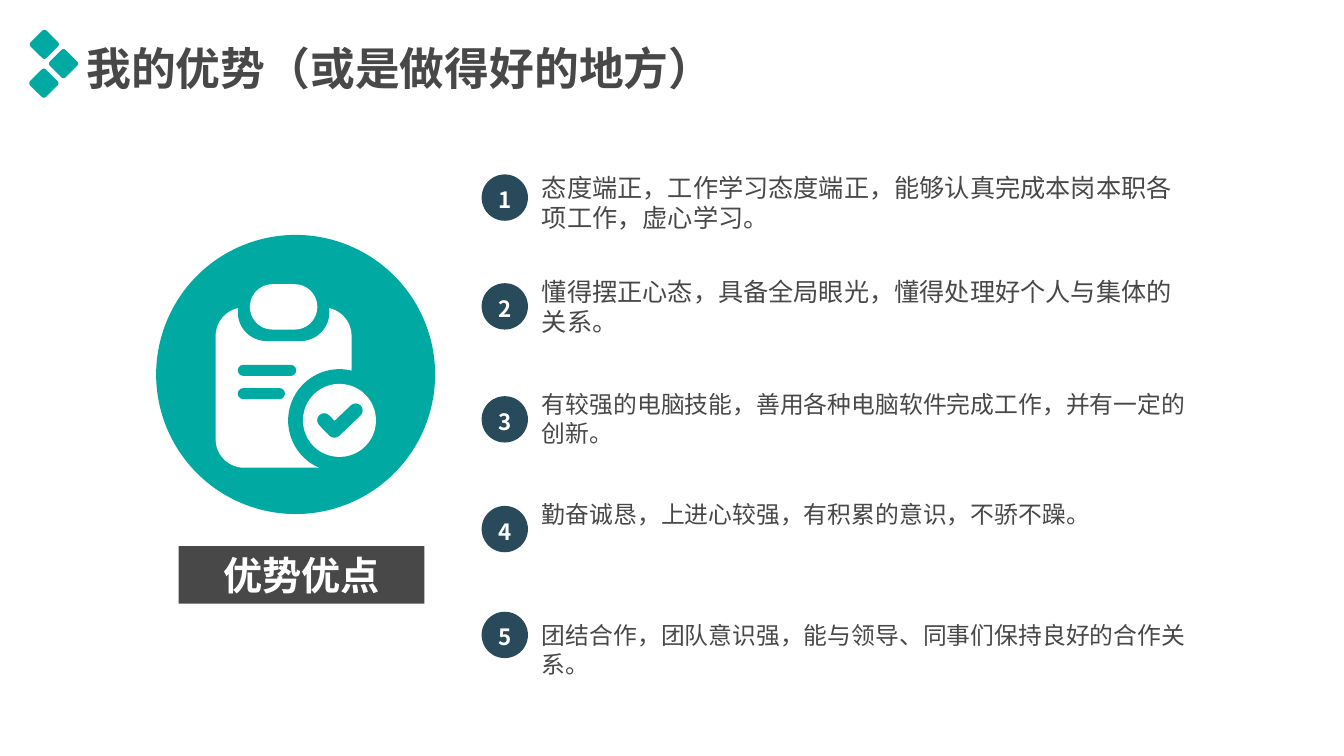
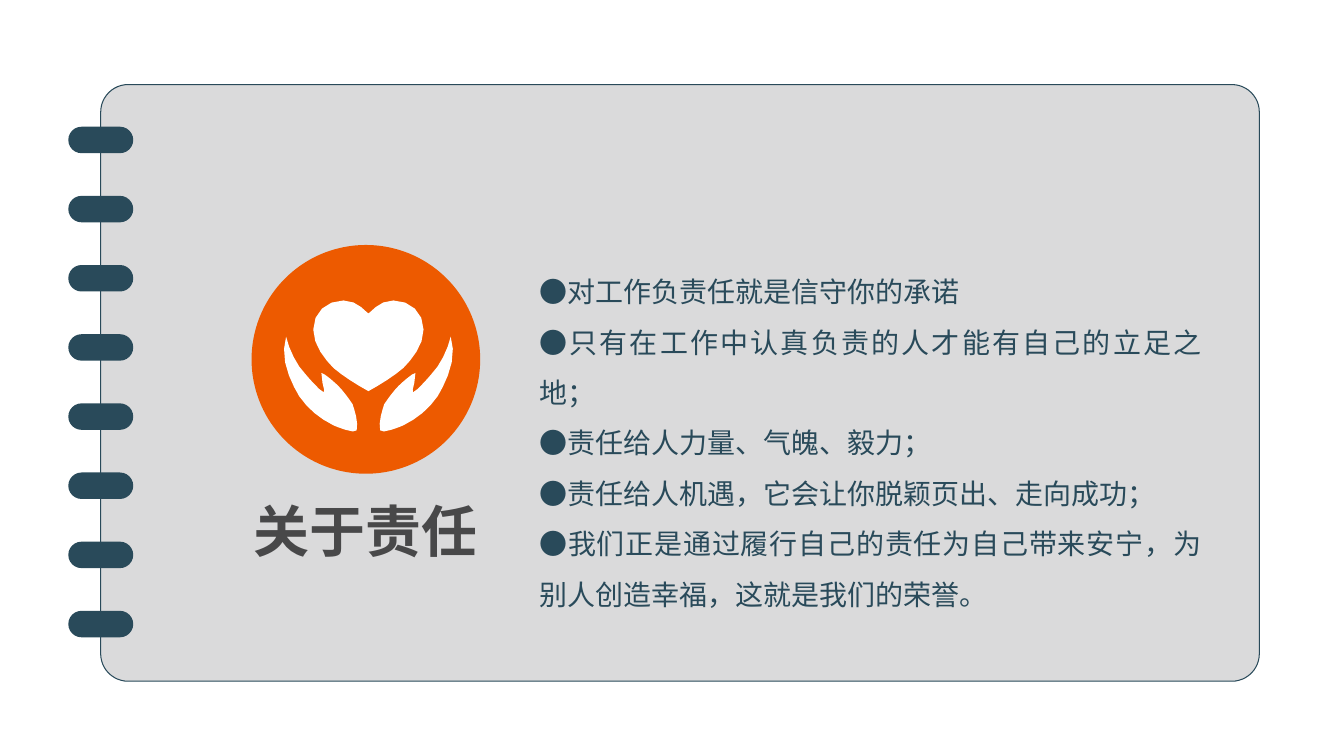
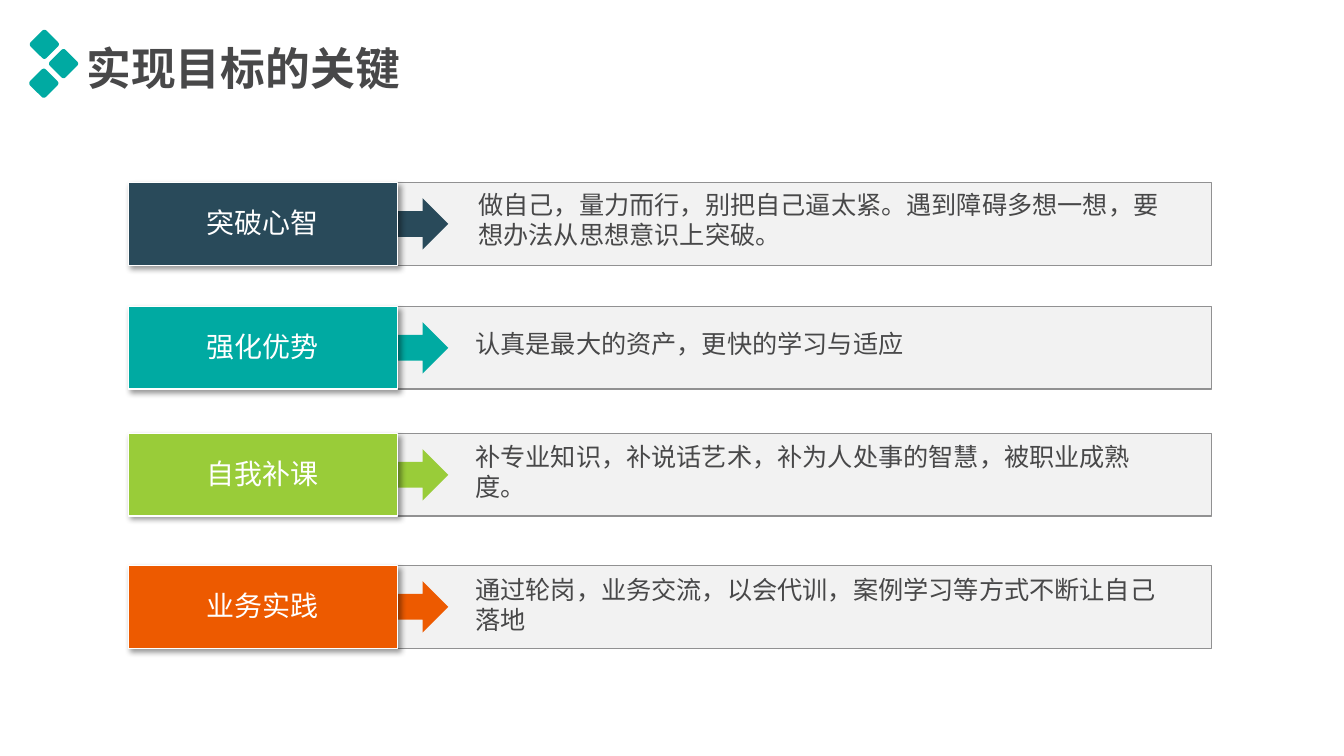
from lxml import etree
from pptx import Presentation
from pptx.dml.color import RGBColor
from pptx.enum.shapes import MSO_SHAPE
from pptx.enum.text import MSO_ANCHOR, PP_ALIGN
from pptx.oxml.ns import qn
from pptx.util import Pt

RECTANGLE, ROUNDED = MSO_SHAPE.RECTANGLE, MSO_SHAPE.ROUNDED_RECTANGLE
ELLIPSE, ARROW = MSO_SHAPE.OVAL, MSO_SHAPE.RIGHT_ARROW
TOP, MIDDLE = MSO_ANCHOR.TOP, MSO_ANCHOR.MIDDLE
LEFT, CENTER, JUSTIFY = PP_ALIGN.LEFT, PP_ALIGN.CENTER, PP_ALIGN.JUSTIFY

FONT = "Noto Sans CJK SC"
TEAL = RGBColor(0x00, 0xAA, 0xA2)
NAVY = RGBColor(0x29, 0x4A, 0x5A)
GREEN = RGBColor(0x99, 0xCC, 0x39)
ORANGE = RGBColor(0xED, 0x5A, 0x00)
CHARCOAL = RGBColor(0x48, 0x48, 0x49)
PAGE_GRAY = RGBColor(0xDA, 0xDA, 0xDB)
BAND_GRAY = RGBColor(0xF2, 0xF2, 0xF2)
BORDER_GRAY = RGBColor(0x91, 0x91, 0x92)
WHITE = RGBColor(0xFF, 0xFF, 0xFF)


def add_shape(slide, kind, left, top, width, height, fill, line=None, corner=None):
    shape = slide.shapes.add_shape(kind, Pt(left), Pt(top), Pt(width), Pt(height))
    shape.shadow.inherit = False
    shape.fill.solid()
    shape.fill.fore_color.rgb = fill
    if line is None:
        shape.line.fill.background()
    else:
        shape.line.color.rgb = line
        shape.line.width = Pt(0.75)
    if corner is not None:
        shape.adjustments[0] = corner
    return shape


def add_text(shape, text, size, color=CHARCOAL, bold=False, align=LEFT,
             spacing=1.2, margin=7.2, bottom=3.6, anchor=TOP):
    """Fill a shape with one paragraph per line; spacing is in multiples of size."""
    frame = shape.text_frame
    frame.word_wrap = True
    frame.vertical_anchor = anchor
    frame.margin_left = frame.margin_right = Pt(margin)
    frame.margin_top = Pt(3.6)
    frame.margin_bottom = Pt(bottom)
    for index, line in enumerate(text.split("\n")):
        paragraph = frame.add_paragraph() if index else frame.paragraphs[0]
        paragraph.alignment = align
        paragraph.line_spacing = Pt(spacing * size)
        paragraph._p.get_or_add_pPr().set("hangingPunct", "0")
        run = paragraph.add_run()
        run.text = line
        run.font.name = FONT
        run.font.size = Pt(size)
        run.font.bold = bold
        run.font.color.rgb = color
        etree.SubElement(run._r.get_or_add_rPr(), qn("a:ea"), typeface=FONT)


presentation = Presentation()
presentation.slide_width = Pt(960.48)
presentation.slide_height = Pt(540)
blank = presentation.slide_layouts[6]
strengths, duty, keys = [presentation.slides.add_slide(blank) for _ in range(3)]

# Shared title with its three diamonds
DIAMOND = 16
for slide, title in ((strengths, "我的优势（或是做得好的地方）"), (keys, "实现目标的关键")):
    box = slide.shapes.add_textbox(Pt(54.7), Pt(25.2), Pt(470.9), Pt(45.4))
    add_text(box, title, 32, bold=True)
    for x, y in ((31.7, 31.7), (45.4, 45.5), (31.3, 59.5)):
        diamond = add_shape(slide, ROUNDED, x - DIAMOND / 2, y - DIAMOND / 2,
                            DIAMOND, DIAMOND, TEAL, corner=0.13)
        diamond.rotation = 45

# Strengths: caption and clipboard badge
caption = add_shape(strengths, RECTANGLE, 127.7, 390.2, 175.7, 41, CHARCOAL)
add_text(caption, "优势优点", 28, color=WHITE, bold=True, align=CENTER)
add_shape(strengths, ELLIPSE, 111.6, 167.8, 199.4, 199.4, TEAL)
for kind, left, top, width, height, fill, corner in (
    (ROUNDED, 154.1, 219.6, 97.2, 114.5, WHITE, 0.21),
    (ROUNDED, 169.9, 202.3, 65.5, 41.3, TEAL, 0.5),
    (ROUNDED, 178.6, 203, 48.2, 32.4, WHITE, 0.5),
    (ROUNDED, 169.9, 260.6, 41.8, 8, TEAL, 0.5),
    (ROUNDED, 169.9, 277.2, 33.8, 8, TEAL, 0.5),
    (ELLIPSE, 205.9, 263.7, 73.4, 73.4, TEAL, None),
    (ELLIPSE, 216.5, 274.2, 52.2, 52.2, WHITE, None),
):
    add_shape(strengths, kind, left, top, width, height, fill, corner=corner)

builder = strengths.shapes.build_freeform(Pt(231.7), Pt(300.2), scale=1)
builder.add_line_segments([(Pt(239), Pt(307.7)), (Pt(254.2), Pt(293.2))], close=False)
check = builder.convert_to_shape()
check.shadow.inherit = False
check.fill.background()
check.line.color.rgb = TEAL
check.line.width = Pt(10)
stroke = check._element.spPr.find(qn("a:ln"))
stroke.set("cap", "rnd")
etree.SubElement(stroke, qn("a:round"))

points = (
    (124.6, 119.5, 18, "态度端正，工作学习态度端正，能够认真完成本岗本职各项工作，虚心学习。"),
    (202.3, 193.7, 18, "懂得摆正心态，具备全局眼光，懂得处理好个人与集体的关系。"),
    (283, 275, 17, "有较强的电脑技能，善用各种电脑软件完成工作，并有一定的创新。"),
    (361.4, 353.5, 17, "勤奋诚恳，上进心较强，有积累的意识，不骄不躁。"),
    (437, 440, 17, "团结合作，团队意识强，能与领导、同事们保持良好的合作关系。"),
)
for number, (circle_top, text_top, size, text) in enumerate(points, 1):
    circle = add_shape(strengths, ELLIPSE, 344.2, circle_top, 33.1, 33.1, NAVY)
    add_text(circle, str(number), 16, color=WHITE, bold=True, align=CENTER, margin=0)
    box = strengths.shapes.add_textbox(Pt(380.2), Pt(text_top), Pt(479.5), Pt(50))
    add_text(box, text, size)

# Duty: notebook page with rings
add_shape(duty, ROUNDED, 72, 60.4, 828, 426.2, PAGE_GRAY, line=NAVY, corner=0.046)
for ring in range(8):
    add_shape(duty, ROUNDED, 48.8, 90.5 + 49.4 * ring, 46.4, 18.9, NAVY, corner=0.5)

box = duty.shapes.add_textbox(Pt(162), Pt(351.4), Pt(198.7), Pt(55.4))
add_text(box, "关于责任", 40, bold=True, align=CENTER)

# Duty: heart held by two hands; each curve is a start and triples of Bézier points
add_shape(duty, ELLIPSE, 179.8, 175, 163.4, 163.4, ORANGE)
AXIS = 263.3
hand_curve = [
    (203, 249.1), (202.3, 262.1), (209.5, 275.8), (213.8, 283),
    (220.3, 292.3), (228.2, 298.8), (238.3, 303.8),
    (239.8, 304.6), (254.2, 310.3), (254.9, 307.4),
    (256.3, 301.7), (253.4, 293), (252, 288.7),
    (249.1, 284.4), (245.5, 279.4), (241.9, 275.8),
    (240.5, 274.3), (231.8, 266.4), (229.7, 266.4),
    (229.7, 276.5), (235.4, 284.4), (228.2, 277.9),
    (223.9, 273.6), (221.8, 271.4), (218.2, 267.1),
    (212.4, 261.4), (206.6, 249.8), (204.5, 240.5),
]
heart_curve = [
    (AXIS, 223.9), (262.1, 223.9), (256.3, 214.6), (245.5, 214.6),
    (233.3, 214.6), (223.9, 223.2), (223.9, 235.4),
    (223.9, 247), (232.6, 257), (238.3, 262.8),
    (245.5, 269), (254.2, 274.3), (AXIS, 279.4),
]
STEPS = 4
halves = []
for curve in (hand_curve, heart_curve):
    outline = [curve[0]]
    for first in range(0, len(curve) - 1, 3):
        segment = curve[first:first + 4]
        for step in range(1, STEPS + 1):
            t = step / STEPS
            weights = ((1 - t) ** 3, 3 * t * (1 - t) ** 2, 3 * t * t * (1 - t), t ** 3)
            outline.append(tuple(sum(weight * point[axis] for weight, point in zip(weights, segment))
                                 for axis in (0, 1)))
    halves.append((outline, [(2 * AXIS - x, y) for x, y in outline]))
(left_hand, right_hand), (left_heart, right_heart) = halves
builder = None
for outline in (left_hand, right_hand, left_heart + right_heart[-2:0:-1]):
    corners = [(Pt(x), Pt(y)) for x, y in outline]
    if builder is None:
        builder = duty.shapes.build_freeform(*corners[0], scale=1)
    else:
        builder.move_to(*corners[0])
    builder.add_line_segments(corners[1:])
heart_in_hands = builder.convert_to_shape()
heart_in_hands.shadow.inherit = False
heart_in_hands.fill.solid()
heart_in_hands.fill.fore_color.rgb = WHITE
heart_in_hands.line.fill.background()

box = duty.shapes.add_textbox(Pt(378.3), Pt(180.7), Pt(487.4), Pt(223.2))
add_text(box, """●对工作负责任就是信守你的承诺
●只有在工作中认真负责的人才能有自己的立足之地；
●责任给人力量、气魄、毅力；
●责任给人机遇，它会让你脱颖页出、走向成功；
●我们正是通过履行自己的责任为自己带来安宁，为别人创造幸福，这就是我们的荣誉。""",
         20, color=NAVY, align=JUSTIFY, spacing=1.8)

# Keys: four labelled bands
bands = (
    (130.4, NAVY, "突破心智", 334.8, 131.8,
     "做自己，量力而行，别把自己逼太紧。遇到障碍多想一想，要想办法从思想意识上突破。"),
    (218.9, TEAL, "强化优势", 332.6, 231.1, "认真是最大的资产，更快的学习与适应"),
    (309.6, GREEN, "自我补课", 332.6, 311.8,
     "补专业知识，补说话艺术，补为人处事的智慧，被职业成熟度。"),
    (403.9, ORANGE, "业务实践", 332.6, 406.8,
     "通过轮岗，业务交流，以会代训，案例学习等方式不断让自己落地"),
)
for top, color, label, text_left, text_top, text in bands:
    add_shape(keys, RECTANGLE, 280.8, top, 585, 59, BAND_GRAY, line=BORDER_GRAY)
    add_shape(keys, ARROW, 275, top + 11.2, 45.4, 36.7, color)
    tab = add_shape(keys, RECTANGLE, 91.6, top, 192.8, 59, color, line=WHITE)
    effects = tab._element.spPr.find(qn("a:effectLst"))
    shadow = etree.SubElement(effects, qn("a:outerShdw"), blurRad=str(Pt(4)), dist=str(Pt(3)),
                              dir="2700000", algn="tl", rotWithShape="0")
    black = etree.SubElement(shadow, qn("a:srgbClr"), val="000000")
    etree.SubElement(black, qn("a:alpha"), val="40000")
    add_text(tab, label, 20, color=WHITE, align=CENTER, bottom=6, anchor=MIDDLE)
    box = keys.shapes.add_textbox(Pt(text_left), Pt(text_top), Pt(504.7), Pt(50.4))
    add_text(box, text, 18)

presentation.save("out.pptx")
